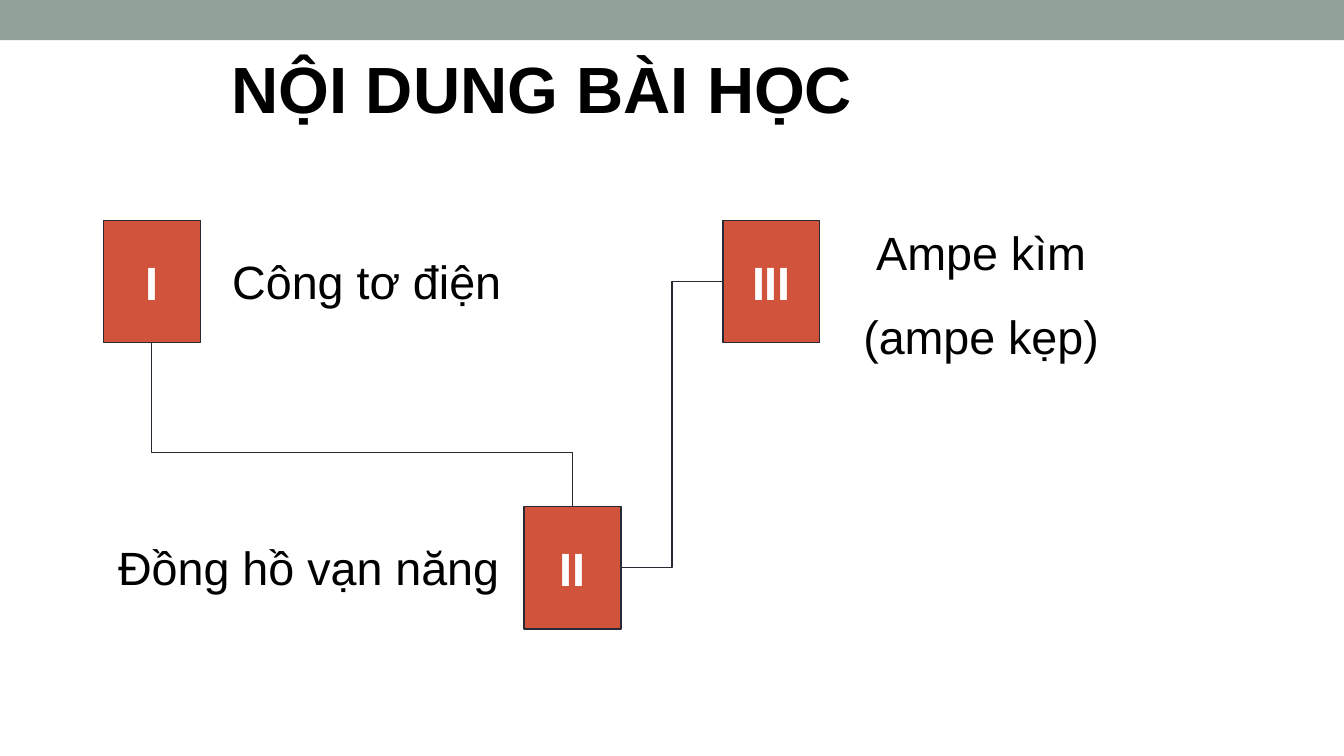
from lxml.etree import SubElement
from pptx import Presentation
from pptx.dml.color import RGBColor
from pptx.enum.shapes import MSO_CONNECTOR, MSO_SHAPE
from pptx.enum.text import MSO_ANCHOR, PP_ALIGN
from pptx.oxml.ns import qn
from pptx.util import Inches, Pt

TOP, LEFT, BOTTOM, RIGHT = range(4)  # connection sites


def rgb(color):
    return RGBColor.from_string(color)


def write(tf, text, size=25, color="000000", bold=False,
          align=PP_ALIGN.CENTER, spacing=None):
    tf.word_wrap = True
    p = tf.paragraphs[0]
    p.alignment = align
    if spacing:
        p.line_spacing = spacing
    r = p.add_run()
    r.text = text
    r.font.name = "Arial"
    r.font.size = Pt(size)
    r.font.bold = bold
    r.font.color.rgb = rgb(color)


class Deck:
    BAND, ACCENT, LINE, WHITE = "93A299", "D2533C", "292934", "FFFFFF"
    TILE_W, TILE_H = 0.72, 0.91

    def __init__(self, slide):
        self.s = slide

    def rect(self, x, y, w, h, fill, line=None):
        sp = self.s.shapes.add_shape(
            MSO_SHAPE.RECTANGLE, Inches(x), Inches(y), Inches(w), Inches(h))
        sp.shadow.inherit = False
        sp.fill.solid()
        sp.fill.fore_color.rgb = rgb(fill)
        if line:
            sp.line.color.rgb = rgb(line)
            sp.line.width = Pt(0.75)
        else:
            sp.line.fill.background()
        return sp

    def tile(self, numeral, x, y):
        sp = self.rect(x, y, self.TILE_W, self.TILE_H, self.ACCENT, self.LINE)
        tf = sp.text_frame
        tf.vertical_anchor = MSO_ANCHOR.MIDDLE
        tf.margin_left = tf.margin_right = Inches(0.1)
        tf.margin_top = tf.margin_bottom = Inches(0.1)
        write(tf, numeral, color=self.WHITE, bold=True)
        return sp

    def text(self, text, x, y, w, h, **fmt):
        sp = self.s.shapes.add_textbox(
            Inches(x), Inches(y), Inches(w), Inches(h))
        write(sp.text_frame, text, **fmt)

    def elbow(self, start, start_site, end, end_site, bend=0.5):
        """Join two tiles; a start at the bottom leads down, across, down."""
        c = self.s.shapes.add_connector(MSO_CONNECTOR.ELBOW, 0, 0, 0, 0)
        c.begin_connect(start, start_site)
        c.end_connect(end, end_site)
        c.line.color.rgb = rgb(self.LINE)
        c.line.width = Pt(0.75)
        spPr = c._element.spPr
        SubElement(spPr, qn("a:effectLst"))
        guides = spPr.find(qn("a:prstGeom")).get_or_add_avLst()
        SubElement(guides, qn("a:gd"), name="adj1",
                   fmla=f"val {round(bend * 100000)}")
        if start_site == BOTTOM:
            # Turn the frame a quarter about its centre
            x, y, w, h = c.left, c.top, c.width, c.height
            c.left, c.top = x + (w - h) // 2, y + (h - w) // 2
            c.width, c.height = h, w
            xfrm = spPr.find(qn("a:xfrm"))
            xfrm.set("rot", "16200000")
            xfrm.set("flipH", "1")


def main():
    prs = Presentation()
    prs.slide_width = Inches(10)
    prs.slide_height = prs.slide_width * 9 // 16
    deck = Deck(prs.slides.add_slide(prs.slide_layouts[6]))

    # Top band and title
    deck.rect(0, 0, 10, 0.3, deck.BAND)
    deck.text("NỘI DUNG BÀI HỌC", 0, 0.31, 8.07, 0.69, size=35, bold=True)

    # Numbered tiles
    upper, lower = 1.64, 3.77
    one = deck.tile("I", 0.77, upper)
    two = deck.tile("II", 3.9, lower)
    three = deck.tile("III", 5.38, upper)

    # Lesson parts
    deck.text("Công tơ điện", 1.63, upper + 0.19, 2.73, 0.52,
              align=PP_ALIGN.JUSTIFY)
    deck.text("Đồng hồ vạn năng", 0.72, lower + 0.19, 3.09, 0.52,
              align=PP_ALIGN.RIGHT)
    deck.text("Ampe kìm (ampe kẹp)", 6.25, 1.41, 2.1, 1.36, spacing=1.5)

    # Path through the parts
    deck.elbow(one, BOTTOM, two, TOP, bend=0.67)
    deck.elbow(two, RIGHT, three, LEFT)

    prs.save("out.pptx")


if __name__ == "__main__":
    main()
